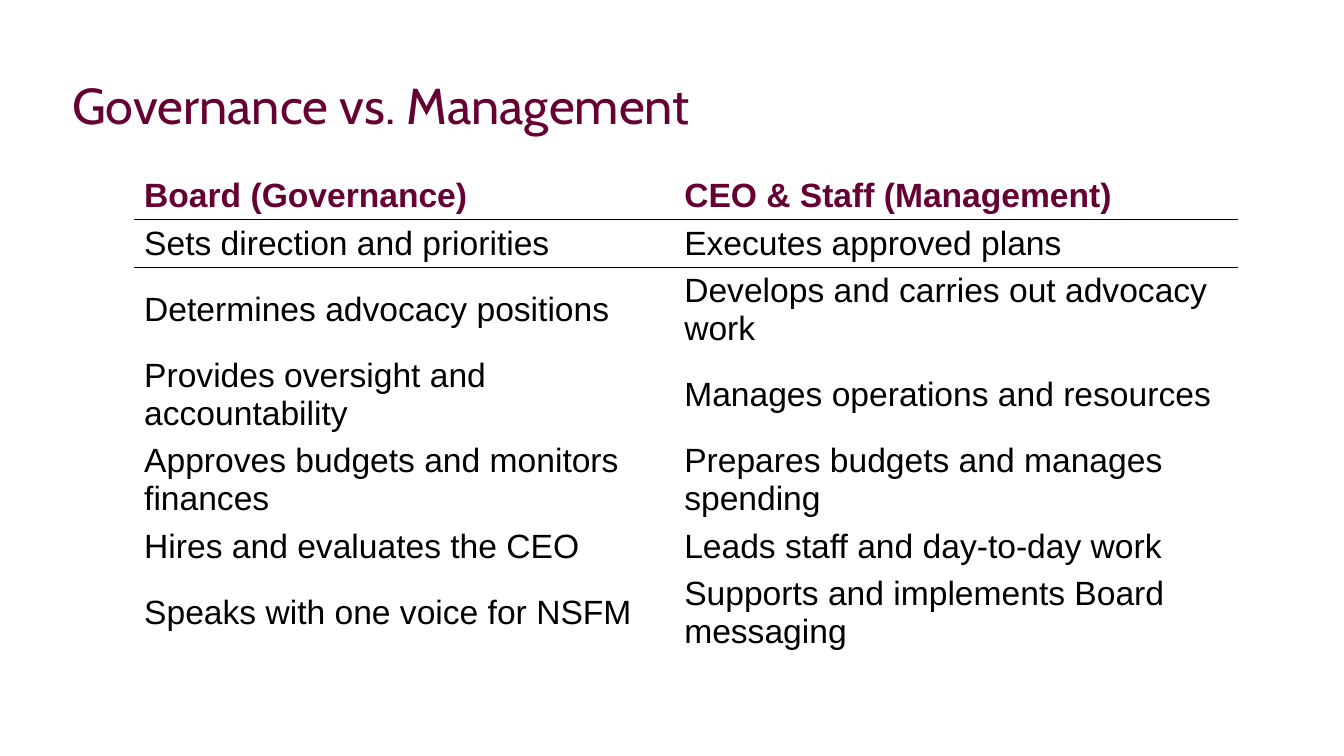
from typing import NamedTuple

from lxml.etree import SubElement
from pptx import Presentation
from pptx.dml.color import RGBColor as Rgb
from pptx.enum.text import MSO_ANCHOR as Anchor, MSO_AUTO_SIZE as AutoSize, PP_ALIGN as Align
from pptx.oxml import parse_xml
from pptx.oxml.ns import nsdecls, qn
from pptx.util import Cm, Pt

COLORS = {"plum": "660033", "text": "000000"}
NO_STYLE_NO_GRID = "{2D5ABB26-0587-4C30-8999-92F81FD0307C}"
ONE_LINE, TWO_LINES = 1.19, 2.14  # row heights in cm
COLUMN_WIDTHS = (13.61, 14.22)


class Duty(NamedTuple):
    board: str
    staff: str
    height: float = ONE_LINE


HEADER = Duty("Board (Governance)", "CEO & Staff (Management)")
DUTIES = [
    Duty("Sets direction and priorities", "Executes approved plans"),
    Duty("Determines advocacy positions", "Develops and carries out advocacy work", TWO_LINES),
    Duty("Provides oversight and accountability", "Manages operations and resources", TWO_LINES),
    Duty("Approves budgets and monitors finances", "Prepares budgets and manages spending", TWO_LINES),
    Duty("Hires and evaluates the CEO", "Leads staff and day-to-day work"),
    Duty("Speaks with one voice for NSFM", "Supports and implements Board messaging", TWO_LINES),
]


def add_run(para, text: str, font: str, size: int, color: str, bold: bool = False) -> None:
    run = para.add_run()
    run.text = text
    run.font.name, run.font.size, run.font.bold = font, Pt(size), bold
    run.font.color.rgb = Rgb.from_string(COLORS[color])


def add_border(cell, side: str) -> None:
    """Draw a thin rule on one side ("lnT" or "lnB") of a cell."""
    line = parse_xml(f'<a:{side} {nsdecls("a")} w="12700"/>')
    fill = SubElement(line, qn("a:solidFill"))
    SubElement(fill, qn("a:srgbClr"), val=COLORS["text"])
    cell._tc.get_or_add_tcPr().insert(0, line)


def add_title(slide, text: str) -> None:
    title = slide.shapes.title
    title.left, title.top, title.width, title.height = Cm(1.57), Cm(1.75), Cm(27.56), Cm(1.8)
    frame = title.text_frame
    frame.auto_size, frame.vertical_anchor = AutoSize.NONE, Anchor.BOTTOM
    para = frame.paragraphs[0]
    para.alignment, para.line_spacing = Align.LEFT, 0.9
    add_run(para, text, "Cabin", 36, "plum")


def add_duty_table(slide, rows: list[Duty]) -> None:
    height = sum(row.height for row in rows)
    frame = slide.shapes.add_table(len(rows), len(COLUMN_WIDTHS), Cm(3.38), Cm(4.34),
                                   Cm(sum(COLUMN_WIDTHS)), Cm(height))
    table = frame.table
    table.horz_banding = False
    table._tbl.tblPr.find(qn("a:tableStyleId")).text = NO_STYLE_NO_GRID
    for column, width in zip(table.columns, COLUMN_WIDTHS):
        column.width = Cm(width)

    for r, row in enumerate(rows):
        table.rows[r].height = Cm(row.height)
        is_header = r == 0
        for c, text in enumerate((row.board, row.staff)):
            cell = table.cell(r, c)
            cell.fill.background()
            cell.vertical_anchor = Anchor.MIDDLE
            add_run(cell.text_frame.paragraphs[0], text, "Arial", 24,
                    "plum" if is_header else "text", is_header)
            # Rule between the header and the first duty
            if r < 2:
                add_border(cell, "lnB" if is_header else "lnT")


def main() -> None:
    deck = Presentation()
    deck.slide_width, deck.slide_height = Cm(33.87), Cm(19.05)
    page = deck.slides.add_slide(deck.slide_layouts[5])  # title only
    add_title(page, "Governance vs. Management")
    add_duty_table(page, [HEADER, *DUTIES])
    deck.save("out.pptx")


if __name__ == "__main__":
    main()
